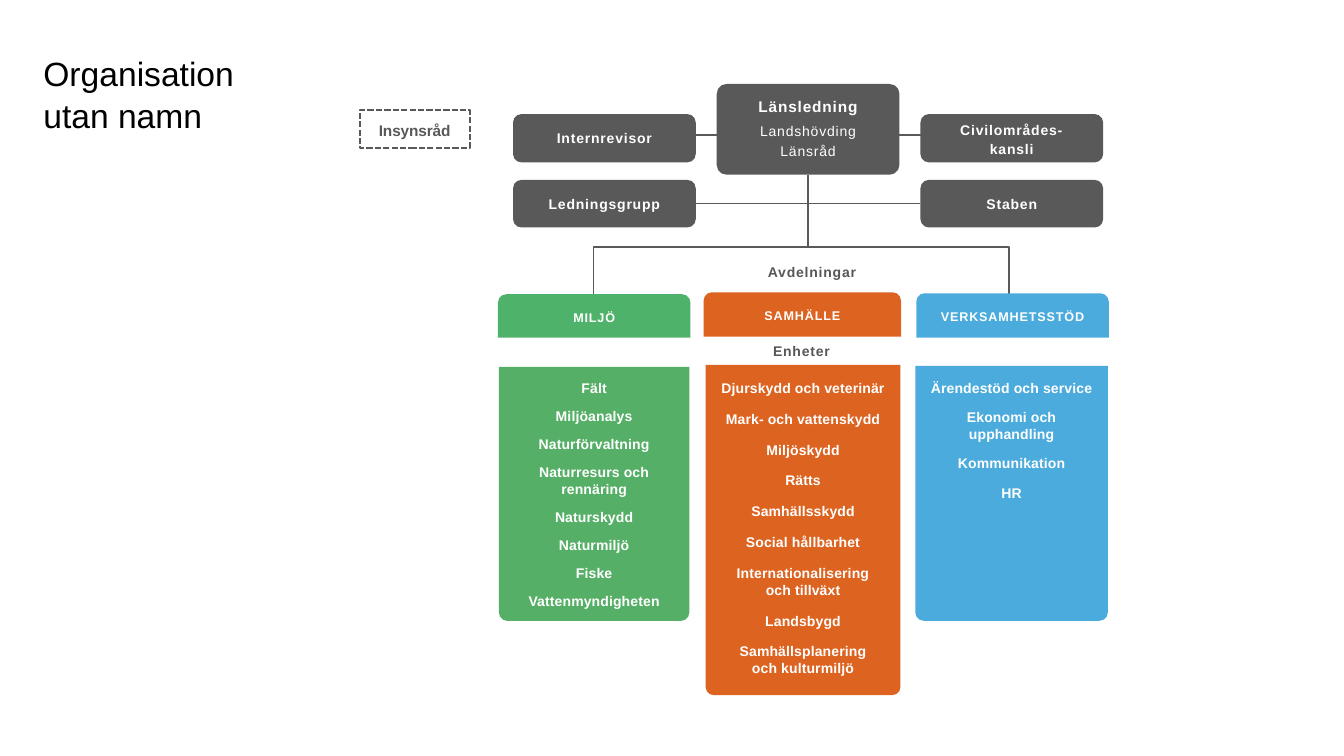
from pptx import Presentation
from pptx.dml.color import RGBColor
from pptx.enum.dml import MSO_LINE
from pptx.enum.shapes import MSO_CONNECTOR, MSO_SHAPE
from pptx.enum.text import MSO_ANCHOR, PP_ALIGN
from pptx.oxml.ns import qn
from pptx.util import Pt
from lxml import etree

ROUNDED, TWO_ROUNDED, RECT = (MSO_SHAPE.ROUNDED_RECTANGLE,
                              MSO_SHAPE.ROUND_2_SAME_RECTANGLE, MSO_SHAPE.RECTANGLE)
STRAIGHT, DASH = MSO_CONNECTOR.STRAIGHT, MSO_LINE.SQUARE_DOT
TOP, MIDDLE = MSO_ANCHOR.TOP, MSO_ANCHOR.MIDDLE
LEFT, CENTER = PP_ALIGN.LEFT, PP_ALIGN.CENTER

BLACK = RGBColor(0x00, 0x00, 0x00)
WHITE = RGBColor(0xFF, 0xFF, 0xFF)
GREY = RGBColor(0x59, 0x59, 0x59)
LABEL_GREY = RGBColor(0x57, 0x57, 0x56)
GREEN = RGBColor(0x4F, 0xB2, 0x6A)
LIGHT_GREEN = RGBColor(0x55, 0xAF, 0x66)
ORANGE = RGBColor(0xDC, 0x63, 0x20)
BLUE = RGBColor(0x4A, 0xAB, 0xDC)

# Content: boxes are (left, top, width, height) in points
TITLE = "Organisation\vutan namn"
COUNCIL = "Insynsråd"
LEADERS = ["Länsledning", "Landshövding", "Länsråd"]
STAFF = {
    "Internrevisor": (366.5, 81.5, 130.5, 34.5),
    "Civilområdes-\vkansli": (657.5, 81.5, 130.5, 34.5),
    "Ledningsgrupp": (366.5, 128.5, 130.5, 34),
    "Staben": (657.5, 128.5, 130.5, 34),
}
LABELS = [("Avdelningar", (535, 187, 90, 14)), ("Enheter", (527.5, 243.5, 90, 14))]
DEPARTMENTS = [
    {"name": "MILJÖ", "head": (355.7, 210.2, 137.5, 31), "head_fill": GREEN,
     "body": (356.4, 262, 136, 181.5), "body_fill": LIGHT_GREEN, "inset": 9, "gap": 8,
     "units": ["Fält", "Miljöanalys", "Naturförvaltning", "Naturresurs och rennäring",
               "Naturskydd", "Naturmiljö", "Fiske", "Vattenmyndigheten"]},
    {"name": "SAMHÄLLE", "head": (502.6, 208.8, 141, 31.7), "head_fill": ORANGE,
     "body": (504, 260.6, 139.2, 236), "body_fill": ORANGE, "inset": 10.5, "gap": 10,
     "units": ["Djurskydd och veterinär", "Mark- och vattenskydd", "Miljöskydd", "Rätts",
               "Samhällsskydd", "Social hållbarhet", "Internationalisering\voch tillväxt",
               "Landsbygd", "Samhällsplanering\voch kulturmiljö"]},
    {"name": "VERKSAMHETSSTÖD", "head": (654.5, 209.5, 137.5, 31.7), "head_fill": BLUE,
     "body": (653.8, 261.4, 137.5, 182), "body_fill": BLUE, "inset": 9.5, "gap": 9,
     "units": ["Ärendestöd och service", "Ekonomi och upphandling", "Kommunikation", "HR"]},
]

prs = Presentation()
prs.slide_width, prs.slide_height = Pt(960), Pt(540)
slide = prs.slides.add_slide(prs.slide_layouts[6])
shapes = slide.shapes


def write(sp, lines, size=10, color=WHITE, bold=True, track=0.6, anchor=MIDDLE,
          align=CENTER, inset=0, side=0, gap=0):
    tf = sp.text_frame
    tf.word_wrap, tf.vertical_anchor = True, anchor
    tf.margin_left = tf.margin_right = Pt(side)
    tf.margin_top, tf.margin_bottom = Pt(inset), Pt(0)
    tf.text = "\n".join(lines)
    for p in tf.paragraphs:
        p.alignment = align
        if p is not lines and gap:
            p.space_after = Pt(gap)
        for r in p.runs:
            f = r.font
            f.name, f.size, f.bold = "Arial", Pt(size), bold
            f.color.rgb = color
            r._r.get_or_add_rPr().set("spc", str(round(track * 100)))
    return tf


def block(kind, box, fill, *radii):
    sp = shapes.add_shape(kind, *map(Pt, box))
    sp.shadow.inherit = False
    sp.fill.solid()
    sp.fill.fore_color.rgb = fill
    sp.line.fill.background()
    for i, radius in enumerate(radii):
        sp.adjustments[i] = radius / min(box[2:])
    return sp


def text_box(box, lines, **style):
    return write(shapes.add_textbox(*map(Pt, box)), lines, **style)


def connect(x1, y1, x2, y2):
    cn = shapes.add_connector(STRAIGHT, Pt(x1), Pt(y1), Pt(x2), Pt(y2))
    cn.line.color.rgb, cn.line.width = GREY, Pt(1)
    etree.SubElement(cn._element.spPr, qn("a:effectLst"))
    return cn


# Title
tf = text_box((31, 36.7, 787, 60), [TITLE], size=24, color=BLACK, bold=False,
              track=0, anchor=TOP, align=LEFT)
tf.paragraphs[0].line_spacing = Pt(30)

# Lines behind the boxes
for x1, x2 in [(379.5, 522), (556.5, 699)]:
    connect(x1, 96.5, x2, 96.5)
BUS_Y = 176.4
fb = shapes.build_freeform(Pt(424), Pt(236))
fb.add_line_segments([(Pt(x), Pt(y)) for x, y in
                      [(424, BUS_Y), (720.7, BUS_Y), (720.7, 236)]], close=False)
bus = fb.convert_to_shape()
bus.shadow.inherit = False
bus.fill.background()
bus.line.color.rgb, bus.line.width = GREY, Pt(1)

# Staff boxes
staff = {}
for name, box in STAFF.items():
    staff[name] = block(ROUNDED, box, GREY, 6)
    tf = write(staff[name], [name])
    if "\v" in name:
        tf.paragraphs[0].line_spacing = Pt(13.7)
cn = connect(497, 145.5, 657.5, 145.5)
cn.begin_connect(staff["Ledningsgrupp"], 3)
cn.end_connect(staff["Staben"], 1)

# County leadership
leaders = block(ROUNDED, (512, 60, 130.5, 64.8), GREY, 7)
tf = write(leaders, LEADERS, anchor=TOP, inset=7.5)
for p, size, gap in zip(tf.paragraphs, (11, 10, 10), (5, 2.2, 0)):
    p.space_after = Pt(gap)
    p.runs[0].font.size = Pt(size)
    p.runs[0].font.bold = size == 11
connect(577.25, 124.8, 577.25, BUS_Y).begin_connect(leaders, 2)

# Advisory council
sp = block(RECT, (257, 78.5, 78.5, 27.4), WHITE)
sp.fill.background()
sp.line.color.rgb, sp.line.width, sp.line.dash_style = GREY, Pt(1.5), DASH
write(sp, [COUNCIL], size=11, color=GREY, track=-0.1, inset=2)

# Departments and their units
for d in DEPARTMENTS:
    write(block(TWO_ROUNDED, d["head"], d["head_fill"], 6, 0), [d["name"]], size=9)
    write(block(TWO_ROUNDED, d["body"], d["body_fill"], 0, 6), d["units"], track=0.1,
          anchor=TOP, inset=d["inset"], side=5, gap=d["gap"])
for text, box in LABELS:
    text_box(box, [text], color=LABEL_GREY)

prs.save("out.pptx")
